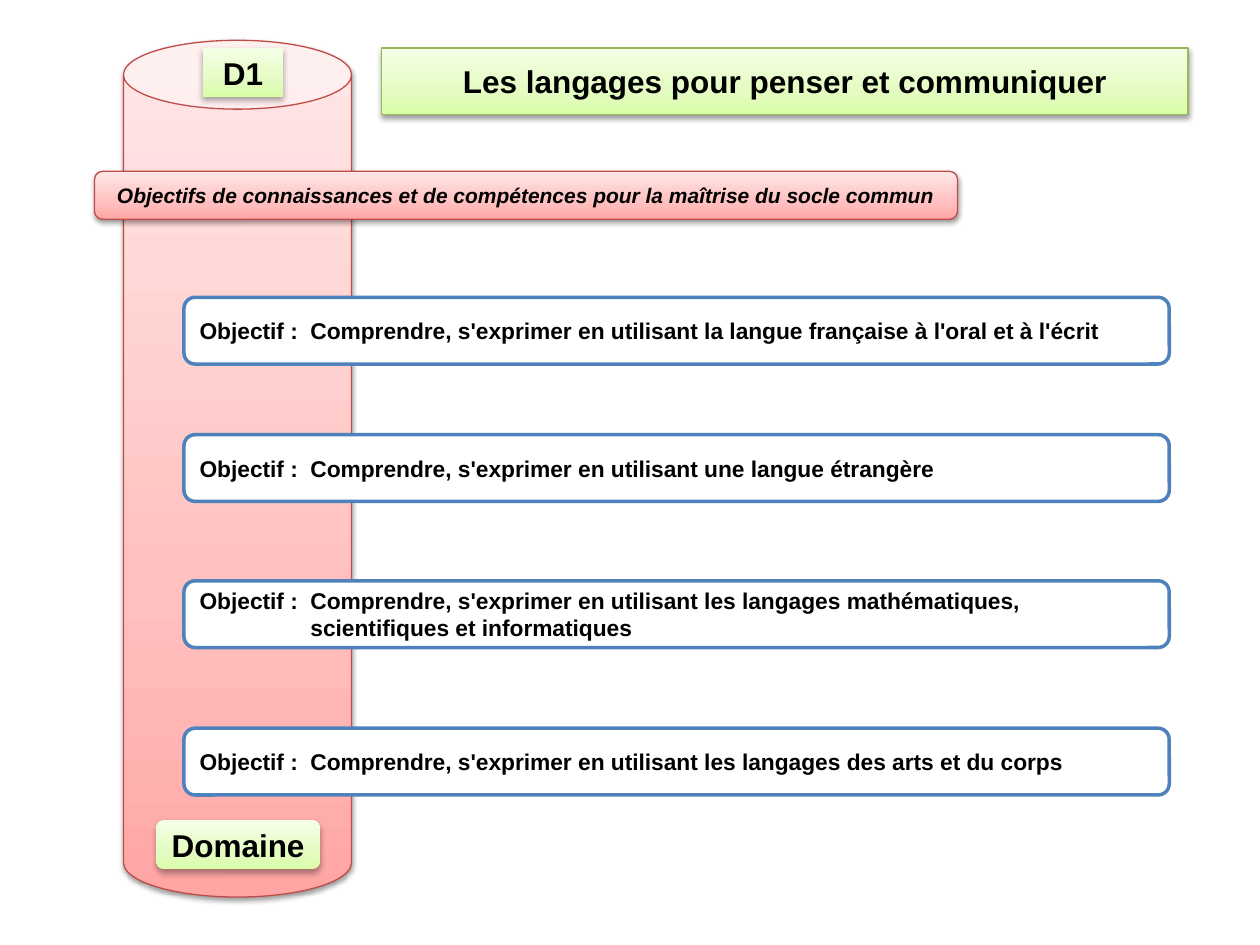
from copy import deepcopy

from lxml.etree import SubElement
from pptx import Presentation
from pptx.dml.color import RGBColor
from pptx.enum.shapes import MSO_SHAPE as Preset
from pptx.enum.text import MSO_ANCHOR as Anchor, MSO_AUTO_SIZE as AutoSize, PP_ALIGN as Align
from pptx.oxml import parse_xml
from pptx.oxml.ns import nsdecls, qn
from pptx.util import Inches, Pt

BLACK = RGBColor(0x00, 0x00, 0x00)
WHITE = RGBColor(0xFF, 0xFF, 0xFF)
BLUE = RGBColor(0x4F, 0x81, 0xBD)
RED_EDGE = RGBColor(0xBF, 0x4C, 0x48)
GREEN_EDGE = RGBColor(0x98, 0xB9, 0x55)
REDS = [RGBColor(0xFF, 0xA6, 0xA5), RGBColor(0xFF, 0xC0, 0xBF), RGBColor(0xFF, 0xE7, 0xE7)]
GREENS = [RGBColor(0xDA, 0xFD, 0xA7), RGBColor(0xE4, 0xFC, 0xC2), RGBColor(0xF5, 0xFF, 0xE7)]
STOPS = [0, 0.35, 1]
EDGE_SHADOW = (3.1, 1.6, 38)
LABEL_SHADOW = (3.5, 2.2, 32)

OBJECTIVES = [
    (2.36, "la langue française à l'oral et à l'écrit"),
    (3.45, "une langue étrangère"),
    (4.61, "les langages mathématiques, scientifiques et informatiques"),
    (5.78, "les langages des arts et du corps"),
]


def add_box(page, preset, left, top, width, height):
    box = page.shapes.add_shape(preset, Inches(left), Inches(top), Inches(width), Inches(height))
    box.shadow.inherit = False
    return box


def paint_gradient(box, colors):
    box.fill.gradient()
    box.fill.gradient_angle = 90
    first = box._element.spPr.find(".//" + qn("a:gs"))
    first.addnext(deepcopy(first))
    for stop, position, color in zip(box.fill.gradient_stops, STOPS, colors):
        stop.position = position
        stop.color.rgb = color


def draw_edge(box, color, width):
    box.line.color.rgb = color
    box.line.width = Pt(width)


def cast_shadow(box, blur, distance, opacity):
    effects = box._element.spPr.find(qn("a:effectLst"))
    shadow = SubElement(effects, qn("a:outerShdw"), blurRad=str(Pt(blur)),
                        dist=str(Pt(distance)), dir="5400000", rotWithShape="0")
    color = SubElement(shadow, qn("a:srgbClr"), val=str(BLACK))
    SubElement(color, qn("a:alpha"), val=str(opacity * 1000))


def write(box, text, size, align=Align.CENTER, anchor=Anchor.MIDDLE, italic=None):
    frame = box.text_frame
    frame.text = text
    frame.word_wrap = True
    frame.auto_size = AutoSize.NONE
    frame.vertical_anchor = anchor
    para = frame.paragraphs[0]
    para.alignment = align
    font = para.runs[0].font
    font.name = "Arial"
    font.size = Pt(size)
    font.bold = True
    font.italic = italic
    font.color.rgb = BLACK
    return para


def add_pillar(page, left, top, width, height):
    pillar = add_box(page, Preset.CAN, left, top, width, height)
    pillar.adjustments[0] = 0.302
    paint_gradient(pillar, REDS)
    draw_edge(pillar, RED_EDGE, 0.75)
    cast_shadow(pillar, *EDGE_SHADOW)


def add_label(page, preset, text, anchor, left, top, width, height):
    label = add_box(page, preset, left, top, width, height)
    paint_gradient(label, GREENS)
    label.line.fill.background()
    cast_shadow(label, *LABEL_SHADOW)
    write(label, text, 18, anchor=anchor)


def place_title(page, text, left, top, width, height):
    title = page.shapes.title
    title.left, title.top = Inches(left), Inches(top)
    title.width, title.height = Inches(width), Inches(height)
    title._element.spPr.append(
        parse_xml(f'<a:prstGeom {nsdecls("a")} prst="roundRect"><a:avLst/></a:prstGeom>'))
    paint_gradient(title, GREENS)
    draw_edge(title, GREEN_EDGE, 0.75)
    SubElement(title._element.spPr, qn("a:effectLst"))
    cast_shadow(title, *EDGE_SHADOW)
    write(title, text, 18)


def add_banner(page, text, left, top, width, height):
    banner = add_box(page, Preset.ROUNDED_RECTANGLE, left, top, width, height)
    paint_gradient(banner, REDS)
    draw_edge(banner, RED_EDGE, 0.75)
    cast_shadow(banner, *EDGE_SHADOW)
    write(banner, text, 12, italic=True)


def add_objective(page, topic, left, top, width, height):
    card = add_box(page, Preset.ROUNDED_RECTANGLE, left, top, width, height)
    card.fill.solid()
    card.fill.fore_color.rgb = WHITE
    draw_edge(card, BLUE, 2)
    para = write(card, f"Objectif :\tComprendre, s'exprimer en utilisant {topic}", 13, Align.LEFT)
    properties = para._p.get_or_add_pPr()
    properties.set("marL", str(Inches(0.88)))
    properties.set("indent", str(-Inches(0.88)))


def main():
    deck = Presentation()
    deck.slide_width, deck.slide_height = Inches(10), Inches(7.5)
    page = deck.slides.add_slide(deck.slide_layouts[5])
    place_title(page, "Les langages pour penser et communiquer", 3.03, 0.38, 6.4, 0.53)
    add_pillar(page, 0.98, 0.32, 1.81, 6.8)
    add_label(page, Preset.RECTANGLE, "D1", Anchor.TOP, 1.61, 0.38, 0.64, 0.39)
    for top, topic in OBJECTIVES:
        add_objective(page, topic, 1.46, top, 7.82, 0.53)
    add_banner(page, "Objectifs de connaissances et de compétences pour la maîtrise du socle commun",
               0.75, 1.36, 6.85, 0.38)
    add_label(page, Preset.ROUNDED_RECTANGLE, "Domaine", Anchor.MIDDLE, 1.24, 6.51, 1.3, 0.39)
    deck.save("out.pptx")


if __name__ == "__main__":
    main()
